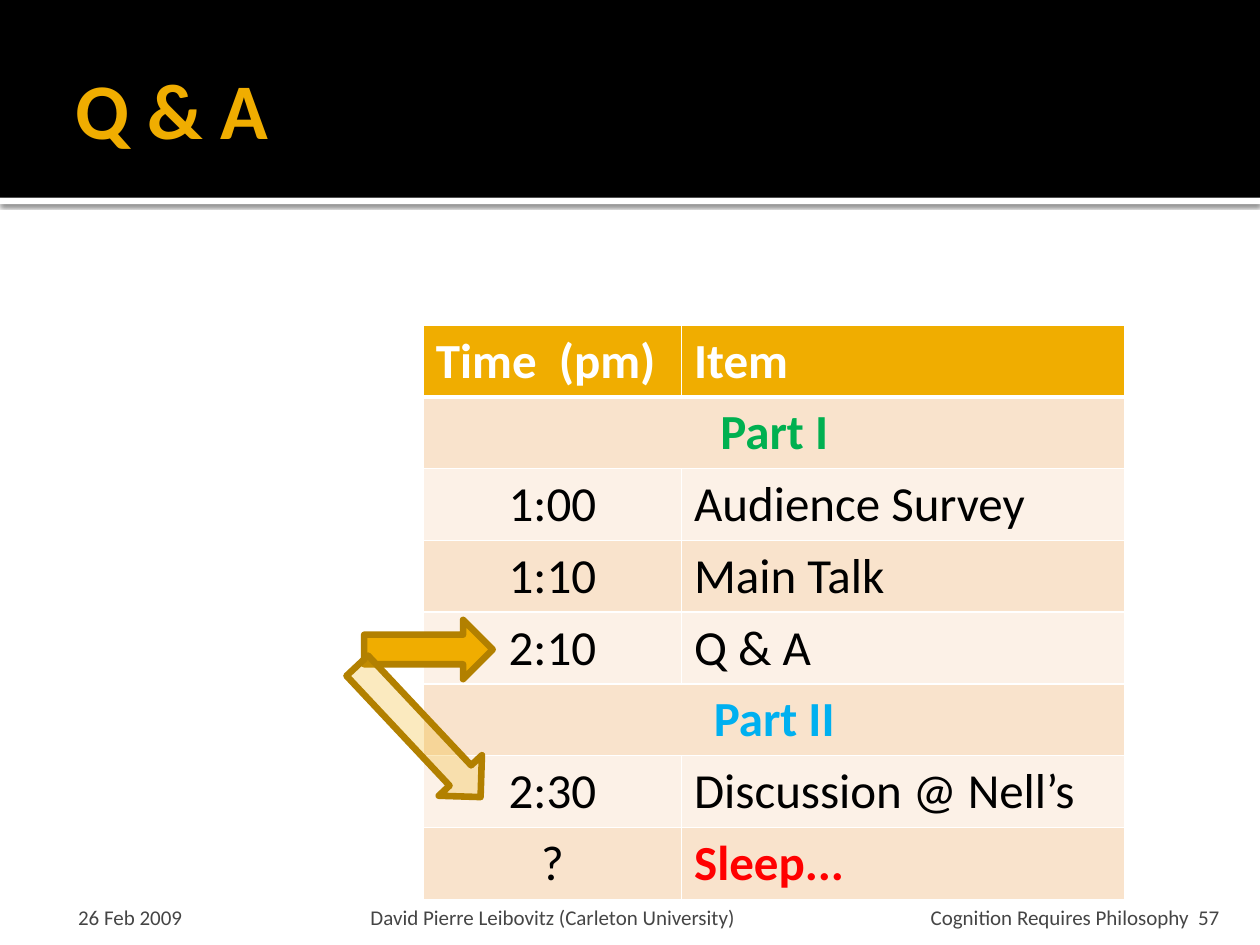
from lxml.etree import SubElement
from pptx import Presentation
from pptx.dml.color import RGBColor
from pptx.enum.shapes import MSO_SHAPE
from pptx.enum.text import MSO_ANCHOR, PP_ALIGN
from pptx.oxml import parse_xml
from pptx.oxml.ns import nsdecls, qn
from pptx.util import Inches, Pt

GOLD, DARK_GOLD, WHITE, BLACK = "F0AD00", "B28000", "FFFFFF", "000000"
BANDS = ["F9E3CC", "FCF1E7"]
GRAY, GREEN, BLUE, RED = "454545", "00B050", "00B0F0", "FF0000"
COLUMN_WIDTHS = [2.05, 3.52]
ROW_HEIGHT = 0.57

AGENDA = [
    ("Time  (pm)", "Item"),
    ("Part I", None),
    ("1:00", "Audience Survey"),
    ("1:10", "Main Talk"),
    ("2:10", "Q & A"),
    ("Part II", None),
    ("2:30", "Discussion @ Nell’s"),
    ("?", "Sleep..."),
]
ACCENTS = {"Part I": GREEN, "Part II": BLUE, "Sleep...": RED}
FOOTERS = [
    ("26 Feb 2009", 0.5, 2.33, 0.12, 0.05, PP_ALIGN.LEFT),
    ("David Pierre Leibovitz (Carleton University)", 2.89, 4.22, 0.05, 0.05, PP_ALIGN.LEFT),
    ("Cognition Requires Philosophy  57", 7.11, 2.67, 0.1, 0.1, PP_ALIGN.RIGHT),
]


def apply(target, values):
    for name, value in values.items():
        setattr(target, name, value)


def paint(fill, color):
    fill.solid()
    fill.fore_color.rgb = RGBColor.from_string(color)


def write(frame, text, size, color, bold=False, align=PP_ALIGN.LEFT):
    para = frame.paragraphs[0]
    para.alignment = align
    span = para.add_run()
    span.text = text
    apply(span.font, {"name": "Calibri", "size": Pt(size), "bold": bold})
    paint(span.font.fill, color)


def format_frame(frame, anchor, left, right, bottom):
    apply(frame, {
        "word_wrap": True, "vertical_anchor": anchor,
        "margin_left": Inches(left), "margin_right": Inches(right),
        "margin_top": Inches(0.05), "margin_bottom": Inches(bottom),
    })


def place(shape, left, top, width, height):
    apply(shape, {"left": Inches(left), "top": Inches(top),
                  "width": Inches(width), "height": Inches(height)})


def add_shape(page, kind, left, top, width, height, color):
    shape = page.shapes.add_shape(kind, *map(Inches, (left, top, width, height)))
    shape.shadow.inherit = False
    paint(shape.fill, color)
    shape.line.fill.background()
    return shape


def add_shadow(shape):
    effects = shape.element.spPr.find(qn("a:effectLst"))
    effects.append(parse_xml(
        f'<a:outerShdw {nsdecls("a")} blurRad="{Pt(2.5)}" dist="{Pt(0.8)}" '
        'dir="5400000" algn="t" rotWithShape="0">'
        f'<a:srgbClr val="{BLACK}"><a:alpha val="60000"/></a:srgbClr></a:outerShdw>'))


def add_title(page, text):
    title = page.shapes.title
    title.element.getparent().append(title.element)
    place(title, 0.5, 0.17, 9, 1.37)
    format_frame(title.text_frame, MSO_ANCHOR.MIDDLE, 0.1, 0.05, 0.05)
    write(title.text_frame, text, 45, GOLD, True)


def add_footer(page, text, left, width, inset_left, inset_right, align):
    box = page.shapes.add_textbox(*map(Inches, (left, 7.08, width, 0.3)))
    format_frame(box.text_frame, MSO_ANCHOR.BOTTOM, inset_left, inset_right, 0)
    write(box.text_frame, text, 12, GRAY, align=align)


def add_borders(cell, top, bottom):
    properties = cell._tc.get_or_add_tcPr()
    for side, width in (("L", 1), ("R", 1), ("T", top), ("B", bottom)):
        line = SubElement(properties, qn(f"a:ln{side}"), w=str(Pt(width)))
        fill = SubElement(line, qn("a:solidFill"))
        SubElement(fill, qn("a:srgbClr"), val=WHITE)


def add_agenda(page, left, top):
    frame = page.shapes.add_table(
        len(AGENDA), 2, Inches(left), Inches(top),
        Inches(sum(COLUMN_WIDTHS)), Inches(ROW_HEIGHT * len(AGENDA)))
    table = frame.table
    for column, width in zip(table.columns, COLUMN_WIDTHS):
        column.width = Inches(width)
    for row, texts in enumerate(AGENDA):
        header = row == 0
        table.rows[row].height = Inches(ROW_HEIGHT)
        for column, text in enumerate(texts):
            cell = table.cell(row, column)
            add_borders(cell, 3 if row == 1 else 1, 3 if header else 1)
            paint(cell.fill, GOLD if header else BANDS[(row - 1) % 2])
            if text:
                centered = column == 0 and not header
                write(cell.text_frame, text, 28,
                      WHITE if header else ACCENTS.get(text, BLACK),
                      header or text in ACCENTS,
                      PP_ALIGN.CENTER if centered else PP_ALIGN.LEFT)
        if texts[1] is None:
            table.cell(row, 0).merge(table.cell(row, 1))


def add_arrow(page, left, top, width, rotation=0, opacity=100):
    arrow = add_shape(page, MSO_SHAPE.RIGHT_ARROW, left, top, width, 0.47, GOLD)
    arrow.rotation = rotation
    paint(arrow.line.fill, DARK_GOLD)
    arrow.line.width = Pt(3.78)
    if opacity < 100:
        color = arrow.element.spPr.find(qn("a:solidFill")).find(qn("a:srgbClr"))
        SubElement(color, qn("a:alpha"), val=str(opacity * 1000))


def main():
    deck = Presentation()
    apply(deck, {"slide_width": Inches(10), "slide_height": Inches(7.5)})
    page = deck.slides.add_slide(deck.slide_layouts[5])
    paint(page.background.fill, WHITE)
    add_shadow(add_shape(page, MSO_SHAPE.RECTANGLE, 0, 1.57, 10, 0.05, WHITE))
    add_shape(page, MSO_SHAPE.RECTANGLE, 0, 0, 10, 1.57, BLACK)
    add_title(page, "Q & A")
    for footer in FOOTERS:
        add_footer(page, *footer)
    add_agenda(page, 3.36, 2.58)
    add_arrow(page, 2.89, 4.92, 1.02)
    add_arrow(page, 2.61, 5.57, 1.43, rotation=46.8, opacity=25)
    deck.save("out.pptx")


if __name__ == "__main__":
    main()
